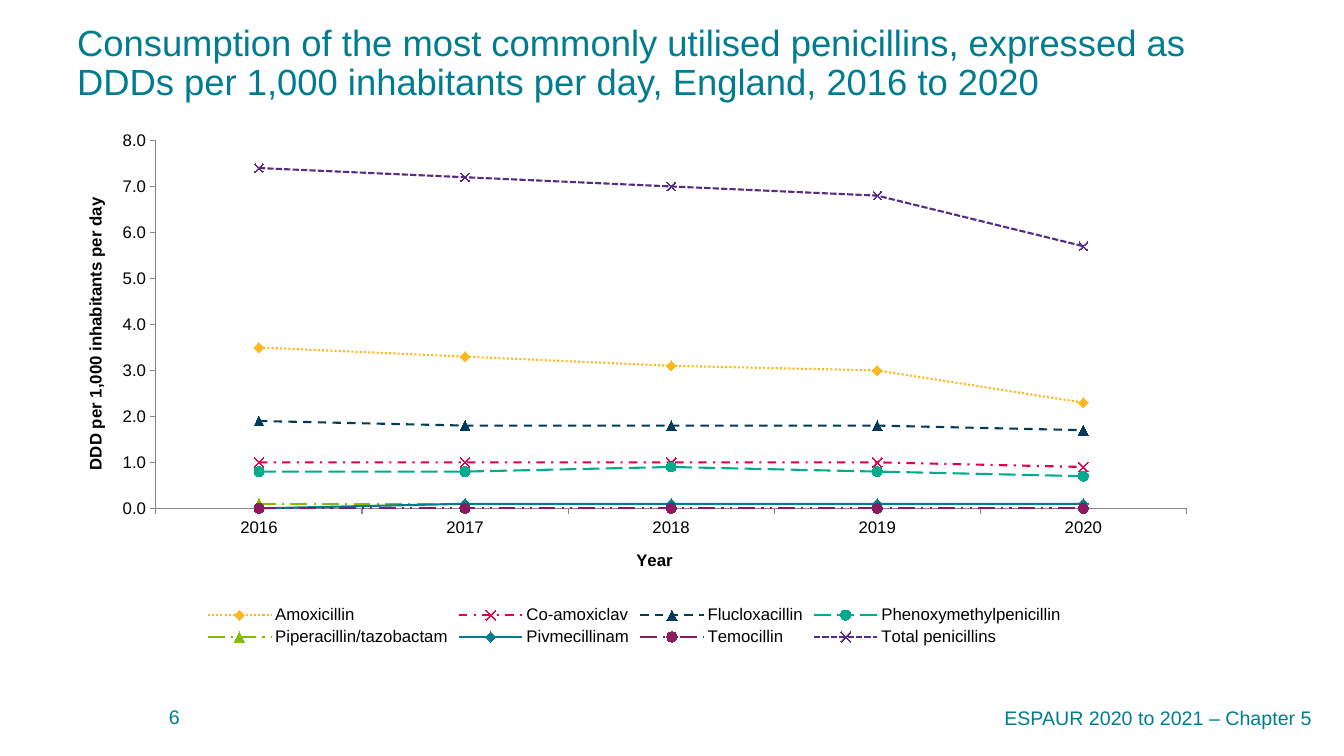
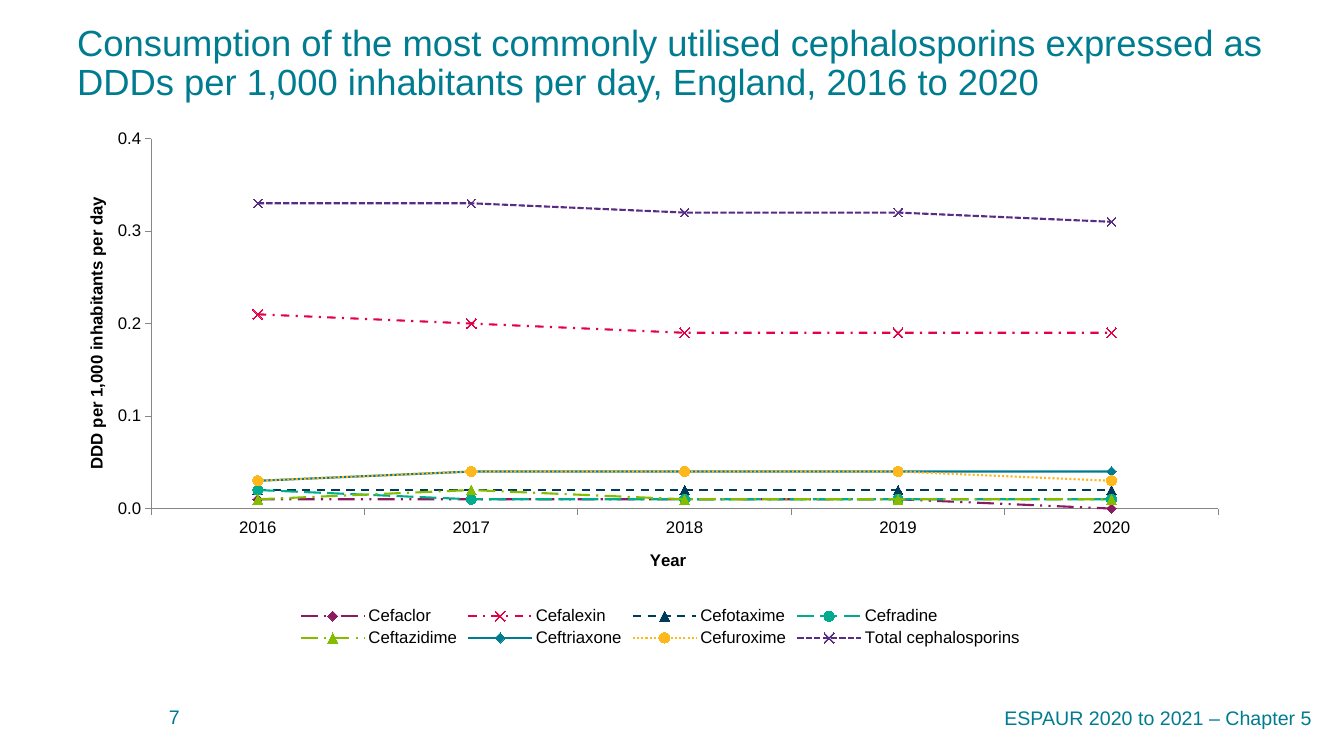
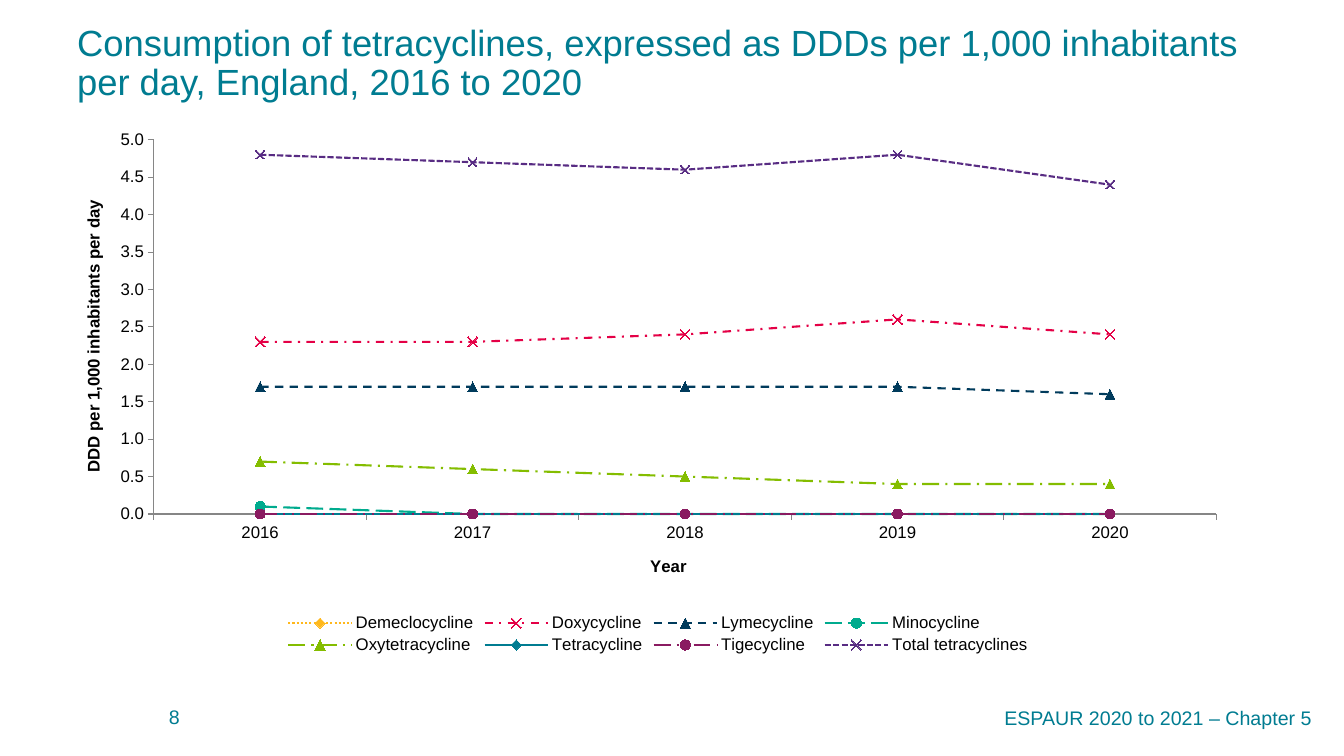
"""Builds three slides on antibiotic consumption in England, 2016 to 2020."""
from lxml.etree import SubElement
from pptx import Presentation
from pptx.chart.data import CategoryChartData
from pptx.dml.color import RGBColor
from pptx.enum.chart import XL_CHART_TYPE, XL_LEGEND_POSITION, XL_MARKER_STYLE, XL_TICK_MARK
from pptx.enum.dml import MSO_LINE
from pptx.enum.text import MSO_ANCHOR, MSO_AUTO_SIZE, PP_ALIGN
from pptx.oxml.ns import qn
from pptx.util import Emu, Pt

FONT = "Arial"
TEAL, BLACK, AXIS_GREY = "007C91", "000000", "868686"
YELLOW, PINK, NAVY, GREEN = "FFB81C", "E40046", "003B5C", "00AB8E"
LIME, PLUM, VIOLET = "84BD00", "8A1B61", "582C83"
DASHES = {
    YELLOW: MSO_LINE.ROUND_DOT,
    PINK: MSO_LINE.DASH_DOT,
    NAVY: MSO_LINE.DASH,
    GREEN: MSO_LINE.LONG_DASH,
    LIME: MSO_LINE.LONG_DASH_DOT,
    TEAL: MSO_LINE.SOLID,
    PLUM: MSO_LINE.DASH_DOT_DOT,
    VIOLET: MSO_LINE.SQUARE_DOT,
}
DIAMOND, CROSS = XL_MARKER_STYLE.DIAMOND, XL_MARKER_STYLE.X
TRIANGLE, CIRCLE = XL_MARKER_STYLE.TRIANGLE, XL_MARKER_STYLE.CIRCLE
MARKERS = [DIAMOND, CROSS, TRIANGLE, CIRCLE, TRIANGLE, DIAMOND, CIRCLE, CROSS]
YELLOW_FIRST = [YELLOW, PINK, NAVY, GREEN, LIME, TEAL, PLUM, VIOLET]
PLUM_FIRST = [PLUM, PINK, NAVY, GREEN, LIME, TEAL, YELLOW, VIOLET]

YEARS = ["2016", "2017", "2018", "2019", "2020"]
FOOTER = "ESPAUR 2020 to 2021 – Chapter 5"
FIRST_PAGE = 6
TOPICS = [
    {
        "title": "Consumption of the most commonly utilised penicillins, expressed as "
                 "DDDs per 1,000 inhabitants per day, England, 2016 to 2020",
        "box": (82, 122, 1105, 528),
        "plot": (0.067, 0.035, 0.933, 0.697),
        "top": 8, "step": 1,
        "colours": YELLOW_FIRST,
        "drugs": {
            "Amoxicillin": (3.5, 3.3, 3.1, 3, 2.3),
            "Co-amoxiclav": (1, 1, 1, 1, 0.9),
            "Flucloxacillin": (1.9, 1.8, 1.8, 1.8, 1.7),
            "Phenoxymethylpenicillin": (0.8, 0.8, 0.9, 0.8, 0.7),
            "Piperacillin/tazobactam": (0.1, 0.1, 0.1, 0.1, 0.1),
            "Pivmecillinam": (0, 0.1, 0.1, 0.1, 0.1),
            "Temocillin": (0, 0, 0, 0, 0),
            "Total penicillins": (7.4, 7.2, 7, 6.8, 5.7),
        },
    },
    {
        "title": "Consumption of the most commonly utilised cephalosporins expressed as "
                 "DDDs per 1,000 inhabitants per day, England, 2016 to 2020",
        "box": (83, 120, 1155, 531),
        "plot": (0.059, 0.035, 0.924, 0.697),
        "top": 0.4, "step": 0.1,
        "colours": PLUM_FIRST,
        "drugs": {
            "Cefaclor": (0.01, 0.01, 0.01, 0.01, 0),
            "Cefalexin": (0.21, 0.2, 0.19, 0.19, 0.19),
            "Cefotaxime": (0.02, 0.02, 0.02, 0.02, 0.02),
            "Cefradine": (0.02, 0.01, 0.01, 0.01, 0.01),
            "Ceftazidime": (0.01, 0.02, 0.01, 0.01, 0.01),
            "Ceftriaxone": (0.03, 0.04, 0.04, 0.04, 0.04),
            "Cefuroxime": (0.03, 0.04, 0.04, 0.04, 0.03),
            "Total cephalosporins": (0.33, 0.33, 0.32, 0.32, 0.31),
        },
    },
    {
        "title": "Consumption of tetracyclines, expressed as DDDs per 1,000 inhabitants "
                 "per day, England, 2016 to 2020",
        "box": (80, 121, 1156, 537),
        "plot": (0.064, 0.035, 0.919, 0.697),
        "top": 5, "step": 0.5,
        "colours": YELLOW_FIRST,
        "drugs": {
            "Demeclocycline": (0, 0, 0, 0, 0),
            "Doxycycline": (2.3, 2.3, 2.4, 2.6, 2.4),
            "Lymecycline": (1.7, 1.7, 1.7, 1.7, 1.6),
            "Minocycline": (0.1, 0, 0, 0, 0),
            "Oxytetracycline": (0.7, 0.6, 0.5, 0.4, 0.4),
            "Tetracycline": (0, 0, 0, 0, 0),
            "Tigecycline": (0, 0, 0, 0, 0),
            "Total tetracyclines": (4.8, 4.7, 4.6, 4.8, 4.4),
        },
    },
]


def px(length):
    return Emu(round(length * 914400 / 100.8))


def rgb(colour):
    return RGBColor.from_string(colour)


def set_font(font, size, colour, bold=False):
    font.name, font.size, font.bold = FONT, Pt(size), bold
    font.color.rgb = rgb(colour)


def fill_frame(frame, text, size, anchor, align):
    frame.text = text
    frame.word_wrap = True
    frame.auto_size = MSO_AUTO_SIZE.NONE
    frame.vertical_anchor = anchor
    paragraph = frame.paragraphs[0]
    paragraph.alignment = align
    set_font(paragraph.runs[0].font, size, TEAL)
    return paragraph


def add_title(slide, text):
    title = slide.shapes.title
    title.left, title.top, title.width, title.height = map(px, (67, 20, 1227, 107))
    heading = fill_frame(title.text_frame, text, 26, MSO_ANCHOR.TOP, PP_ALIGN.LEFT)
    heading.line_spacing = 0.9


def add_label(slide, text, box, align, indent=0):
    label = slide.shapes.add_textbox(*map(px, box))
    paragraph = fill_frame(label.text_frame, text, 14, MSO_ANCHOR.MIDDLE, align)
    if indent:
        paragraph._p.get_or_add_pPr().set("marL", str(px(indent)))


def style_axis(axis, title):
    axis.has_major_gridlines = False
    axis.major_tick_mark = XL_TICK_MARK.OUTSIDE
    axis.minor_tick_mark = XL_TICK_MARK.NONE
    axis.format.line.color.rgb = rgb(AXIS_GREY)
    axis.format.line.width = Pt(0.75)
    set_font(axis.tick_labels.font, 12, BLACK)
    frame = axis.axis_title.text_frame
    frame.text = title
    set_font(frame.paragraphs[0].runs[0].font, 12, BLACK, bold=True)


def style_series(series, colour, marker_style):
    series.smooth = False
    line = series.format.line
    line.color.rgb = rgb(colour)
    line.width = Pt(1.5)
    line.dash_style = DASHES[colour]
    marker = series.marker
    marker.style = marker_style
    marker.size = 6 if colour == VIOLET else 7
    if colour == PINK:
        marker.format.fill.background()
    else:
        marker.format.fill.solid()
        marker.format.fill.fore_color.rgb = rgb(colour)
    marker.format.line.color.rgb = rgb(colour)


def place_plot(chart, plot):
    area = chart._chartSpace.find(".//" + qn("c:plotArea"))
    layout = area.find(qn("c:layout"))
    if layout is not None:
        area.remove(layout)
    layout = area.makeelement(qn("c:layout"))
    area.insert(0, layout)
    manual = SubElement(layout, qn("c:manualLayout"))
    settings = [("layoutTarget", "inner"), ("xMode", "edge"), ("yMode", "edge")]
    for tag, value in settings + list(zip("xywh", plot)):
        SubElement(manual, qn("c:" + tag)).set("val", str(value))


def add_consumption_chart(slide, topic):
    data = CategoryChartData(number_format="0.0")
    data.categories = YEARS
    for drug, rates in topic["drugs"].items():
        data.add_series(drug, rates)
    chart = slide.shapes.add_chart(
        XL_CHART_TYPE.LINE_MARKERS, *map(px, topic["box"]), data).chart
    set_font(chart.font, 12, BLACK)
    chart.has_title = False
    chart.has_legend = True
    chart.legend.position = XL_LEGEND_POSITION.BOTTOM
    chart.legend.include_in_layout = False
    set_font(chart.legend.font, 12, BLACK)
    chart.plots[0].vary_by_categories = False
    style_axis(chart.category_axis, "Year")
    rate_axis = chart.value_axis
    style_axis(rate_axis, "DDD per 1,000 inhabitants per day")
    turn = rate_axis.axis_title._element.find(".//" + qn("a:bodyPr"))
    turn.set("rot", "-5400000")
    turn.set("vert", "horz")
    rate_axis.minimum_scale, rate_axis.maximum_scale = 0, topic["top"]
    rate_axis.major_unit = topic["step"]
    rate_axis.tick_labels.number_format = "0.0"
    rate_axis.tick_labels.number_format_is_linked = False
    for series, colour, marker in zip(chart.plots[0].series, topic["colours"], MARKERS):
        style_series(series, colour, marker)
    place_plot(chart, topic["plot"])


def main():
    deck = Presentation()
    deck.slide_width, deck.slide_height = px(1344), px(756)
    title_only = deck.slide_layouts[5]
    for page, topic in enumerate(TOPICS, FIRST_PAGE):
        slide = deck.slides.add_slide(title_only)
        add_consumption_chart(slide, topic)
        add_label(slide, FOOTER, (14, 687, 1308, 62), PP_ALIGN.RIGHT)
        add_label(slide, str(page), (90, 697, 1103, 40), PP_ALIGN.LEFT, indent=69)
        add_title(slide, topic["title"])
    deck.save("out.pptx")


if __name__ == "__main__":
    main()
